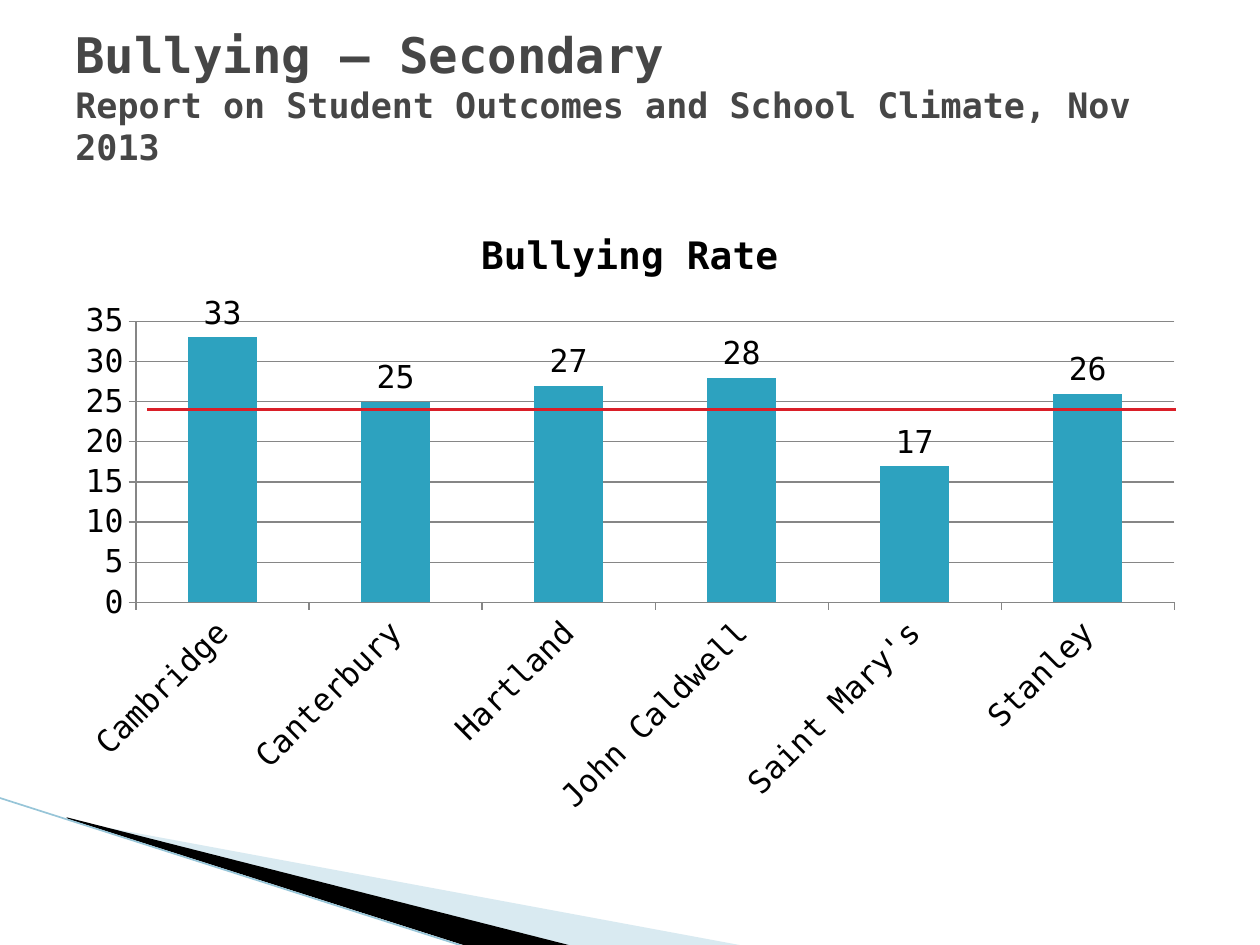
"""Build the secondary-school bullying rate slide."""
from dataclasses import dataclass

from lxml.etree import SubElement
from pptx import Presentation
from pptx.chart.data import CategoryChartData
from pptx.dml.color import RGBColor
from pptx.enum.chart import XL_CHART_TYPE, XL_LABEL_POSITION, XL_TICK_MARK
from pptx.enum.shapes import MSO_CONNECTOR
from pptx.enum.text import MSO_ANCHOR
from pptx.oxml.ns import qn
from pptx.slide import Slide
from pptx.util import Pt

FONT = "DejaVu Sans Mono"
AXIS_GRAY = "868686"
RATES = {
    "Cambridge": 33,
    "Canterbury": 25,
    "Hartland": 27,
    "John Caldwell": 28,
    "Saint Mary's": 17,
    "Stanley": 26,
}


@dataclass(frozen=True)
class Wedge:
    corners: tuple[tuple[float, float], ...]
    color: str
    opacity: int = 100


@dataclass(frozen=True)
class Rule:
    start: tuple[float, float]
    end: tuple[float, float]
    color: str
    weight: float


WEDGES = (
    Wedge(((39.6, 468.7), (428.4, 540.7), (328.3, 540.7), (39.6, 468)), "A0CBDC", 40),
    Wedge(((38.2, 467.3), (329, 540.7), (267.8, 541.4), (38.9, 468)), "000000"),
)
EDGE = Rule((-0.7, 455.8), (267.1, 541.4), "97C5D8", 0.95)
AVERAGE = Rule((671.8, 234), (84.2, 234), "DA1F28", 1.75)


def rgb(color: str) -> RGBColor:
    return RGBColor.from_string(color)


def style_font(font, *, size: float, color: str = "000000", bold: bool = False) -> None:
    font.name = FONT
    font.size = Pt(size)
    font.bold = bold
    font.color.rgb = rgb(color)


def add_line(text_frame, text: str, **style) -> None:
    paragraph = text_frame.paragraphs[0]
    if paragraph.runs:
        paragraph.add_line_break()
    run = paragraph.add_run()
    run.text = text
    style_font(run.font, **style)


def draw_wedge(slide: Slide, wedge: Wedge) -> None:
    first, *rest = wedge.corners
    builder = slide.shapes.build_freeform(*first, scale=Pt(1))
    builder.add_line_segments(rest, close=True)
    shape = builder.convert_to_shape()
    shape.shadow.inherit = False
    shape.line.fill.background()
    shape.fill.solid()
    shape.fill.fore_color.rgb = rgb(wedge.color)
    if wedge.opacity < 100:
        tint = shape.fill._xPr.find(qn("a:solidFill"))[0]
        SubElement(tint, qn("a:alpha")).set("val", str(wedge.opacity * 1000))


def draw_rule(slide: Slide, rule: Rule) -> None:
    ends = (Pt(value) for value in (*rule.start, *rule.end))
    connector = slide.shapes.add_connector(MSO_CONNECTOR.STRAIGHT, *ends)
    connector.line.color.rgb = rgb(rule.color)
    connector.line.width = Pt(rule.weight)
    SubElement(connector._element.spPr, qn("a:effectLst"))


def draw_heading(slide: Slide) -> None:
    heading = slide.shapes.add_textbox(Pt(36), Pt(21.6), Pt(648), Pt(90)).text_frame
    heading.word_wrap = True
    heading.vertical_anchor = MSO_ANCHOR.MIDDLE
    heading.margin_bottom = Pt(26.9)
    add_line(heading, "Bullying – Secondary", size=28, color="464646", bold=True)
    add_line(heading, "Report on Student Outcomes and School Climate, Nov 2013",
             size=20, color="464646", bold=True)


def draw_chart(slide: Slide) -> None:
    rates = CategoryChartData()
    rates.categories = list(RATES)
    rates.add_series("Bullying Rate", list(RATES.values()))
    chart = slide.shapes.add_chart(XL_CHART_TYPE.COLUMN_CLUSTERED, Pt(36), Pt(116.6),
                                   Pt(648), Pt(356.4), rates).chart
    style_font(chart.font, size=18)
    chart.has_legend = False
    chart.has_title = True
    add_line(chart.chart_title.text_frame, "Bullying Rate", size=21.6, bold=True)
    chart.chart_title.include_in_layout = False

    for axis in (chart.category_axis, chart.value_axis):
        axis.major_tick_mark = XL_TICK_MARK.OUTSIDE
        axis.format.line.color.rgb = rgb(AXIS_GRAY)
    chart.value_axis.has_major_gridlines = True
    chart.value_axis.major_gridlines.format.line.color.rgb = rgb(AXIS_GRAY)

    columns = chart.plots[0]
    columns.gap_width = 150
    columns.vary_by_categories = False
    fill = columns.series[0].format.fill
    fill.solid()
    fill.fore_color.rgb = rgb("2DA2BF")
    columns.has_data_labels = True
    labels = columns.data_labels
    labels.show_value = True
    labels.position = XL_LABEL_POSITION.OUTSIDE_END
    style_font(labels.font, size=18)


def main() -> None:
    deck = Presentation()
    deck.slide_width, deck.slide_height = Pt(720), Pt(540)
    slide = deck.slides.add_slide(deck.slide_layouts[6])
    for wedge in WEDGES:
        draw_wedge(slide, wedge)
    draw_rule(slide, EDGE)
    draw_chart(slide)
    draw_heading(slide)
    draw_rule(slide, AVERAGE)
    deck.save("out.pptx")


if __name__ == "__main__":
    main()
